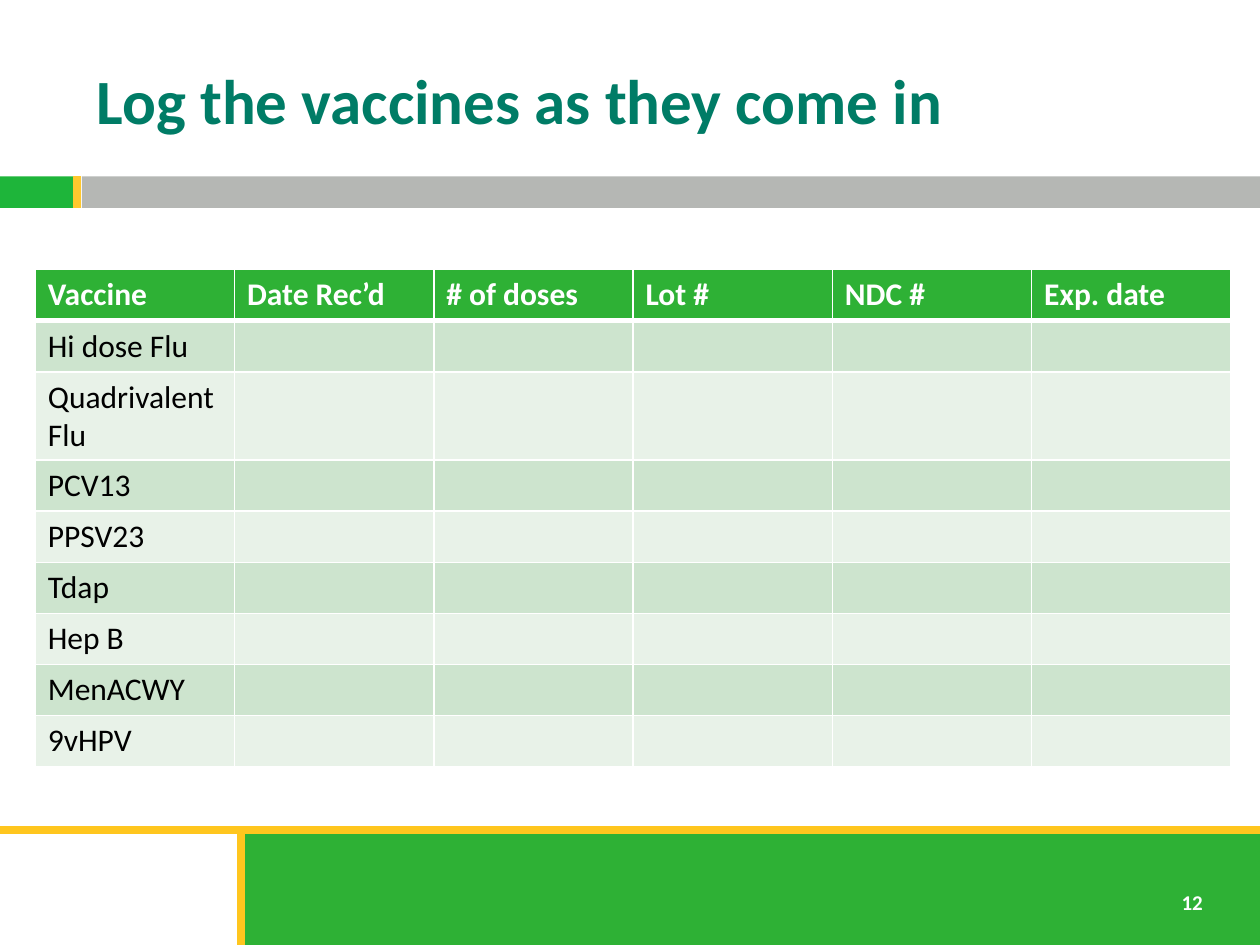
"""Build a slide with a log table for incoming vaccines."""
from dataclasses import dataclass

from lxml import etree
from pptx import Presentation
from pptx.dml.color import RGBColor
from pptx.enum.shapes import MSO_CONNECTOR, MSO_SHAPE
from pptx.enum.text import MSO_ANCHOR
from pptx.oxml.ns import qn
from pptx.util import Inches, Pt

RECTANGLE = MSO_SHAPE.RECTANGLE
STRAIGHT = MSO_CONNECTOR.STRAIGHT
MIDDLE = MSO_ANCHOR.MIDDLE
TOP = MSO_ANCHOR.TOP
FONT = "Calibri"
COLORS = {
    "white": "FFFFFF",
    "black": "000000",
    "teal": "007C66",
    "bright green": "1EB53A",
    "green": "2EB135",
    "gray": "B5B7B4",
    "gold": "FFC61E",
    "light gold": "FFC82E",
    "dark band": "CDE4CE",
    "light band": "E8F2E8",
}
HEADINGS = ["Vaccine", "Date Rec’d", "# of doses", "Lot #", "NDC #", "Exp. date"]
VACCINES = ["Hi dose Flu", "Quadrivalent Flu", "PCV13", "PPSV23", "Tdap", "Hep B", "MenACWY", "9vHPV"]


@dataclass
class Bar:
    left: float
    top: float
    width: float
    height: float
    color: str


@dataclass
class Rule:
    start: tuple[float, float]
    end: tuple[float, float]
    color: str


@dataclass
class Label:
    text: str
    left: float
    top: float
    width: float
    height: float
    size: int
    color: str
    wrap: bool
    anchor: MSO_ANCHOR


BARS = [
    Bar(0, 1.35, 10, 0.35, "white"),
    Bar(0, 1.4, 0.58, 0.25, "bright green"),
    Bar(0.65, 1.4, 9.35, 0.25, "gray"),
    Bar(1.91, 6.59, 8.09, 0.91, "green"),
]
RULES = [
    Rule((0, 6.59), (10, 6.59), "gold"),
    Rule((1.91, 6.59), (1.91, 7.5), "gold"),
    Rule((0.61, 1.4), (0.61, 1.65), "light gold"),
]
LABELS = [
    Label("12", 9.28, 7.01, 0.4, 0.3, 12, "white", False, TOP),
    Label("Log the vaccines as they come in", 0.67, 0.25, 8.92, 1.08, 36, "teal", True, MIDDLE),
]


def rgb(name: str) -> RGBColor:
    """Return the named colour."""
    return RGBColor.from_string(COLORS[name])


def style_text(frame, size: int, color: str, bold: bool) -> None:
    """Format every run of a text frame."""
    for para in frame.paragraphs:
        for span in para.runs:
            span.font.name = FONT
            span.font.size = Pt(size)
            span.font.bold = bold
            span.font.color.rgb = rgb(color)


def draw_bar(page, bar: Bar) -> None:
    """Draw a filled rectangle without an outline."""
    shape = page.shapes.add_shape(
        RECTANGLE, Inches(bar.left), Inches(bar.top), Inches(bar.width), Inches(bar.height))
    shape.shadow.inherit = False
    shape.fill.solid()
    shape.fill.fore_color.rgb = rgb(bar.color)
    shape.line.fill.background()


def draw_rule(page, rule: Rule) -> None:
    """Draw a straight line without a shadow."""
    ends = [Inches(value) for value in (*rule.start, *rule.end)]
    line = page.shapes.add_connector(STRAIGHT, *ends)
    line.line.color.rgb = rgb(rule.color)
    line.line.width = Pt(4.5)
    etree.SubElement(line._element.spPr, qn("a:effectLst"))


def draw_label(page, label: Label) -> None:
    """Draw a text box with bold text."""
    box = page.shapes.add_textbox(
        Inches(label.left), Inches(label.top), Inches(label.width), Inches(label.height))
    frame = box.text_frame
    frame.word_wrap = label.wrap
    frame.vertical_anchor = label.anchor
    frame.text = label.text
    style_text(frame, label.size, label.color, True)


def set_borders(cell, top: float, bottom: float) -> None:
    """Give a cell white borders of the stated widths in points."""
    properties = cell._tc.get_or_add_tcPr()
    for side, width in {"L": 1, "R": 1, "T": top, "B": bottom}.items():
        border = etree.SubElement(properties, qn(f"a:ln{side}"), w=str(Pt(width)))
        fill = etree.SubElement(border, qn("a:solidFill"))
        etree.SubElement(fill, qn("a:srgbClr"), val=COLORS["white"])


def draw_log(page) -> None:
    """Draw the vaccine log with banded rows."""
    rows = [HEADINGS] + [[name] + [""] * (len(HEADINGS) - 1) for name in VACCINES]
    table = page.shapes.add_table(
        len(rows), len(HEADINGS), Inches(0.28), Inches(2.14), Inches(9.49), Inches(3.65)).table
    for index, texts in enumerate(rows):
        header = index == 0
        band = "green" if header else ("light band", "dark band")[index % 2]
        for column, text in enumerate(texts):
            cell = table.cell(index, column)
            set_borders(cell, 3 if index == 1 else 1, 3 if header else 1)
            cell.fill.solid()
            cell.fill.fore_color.rgb = rgb(band)
            cell.text_frame.text = text
            style_text(cell.text_frame, 18, "white" if header else "black", header)


def main() -> None:
    """Build and save the deck."""
    deck = Presentation()
    deck.slide_width, deck.slide_height = Inches(10), Inches(7.5)
    page = deck.slides.add_slide(deck.slide_layouts[6])
    page.background.fill.solid()
    page.background.fill.fore_color.rgb = rgb("white")
    for bar in BARS:
        draw_bar(page, bar)
    for rule in RULES:
        draw_rule(page, rule)
    for label in LABELS:
        draw_label(page, label)
    draw_log(page)
    deck.save("out.pptx")


if __name__ == "__main__":
    main()
